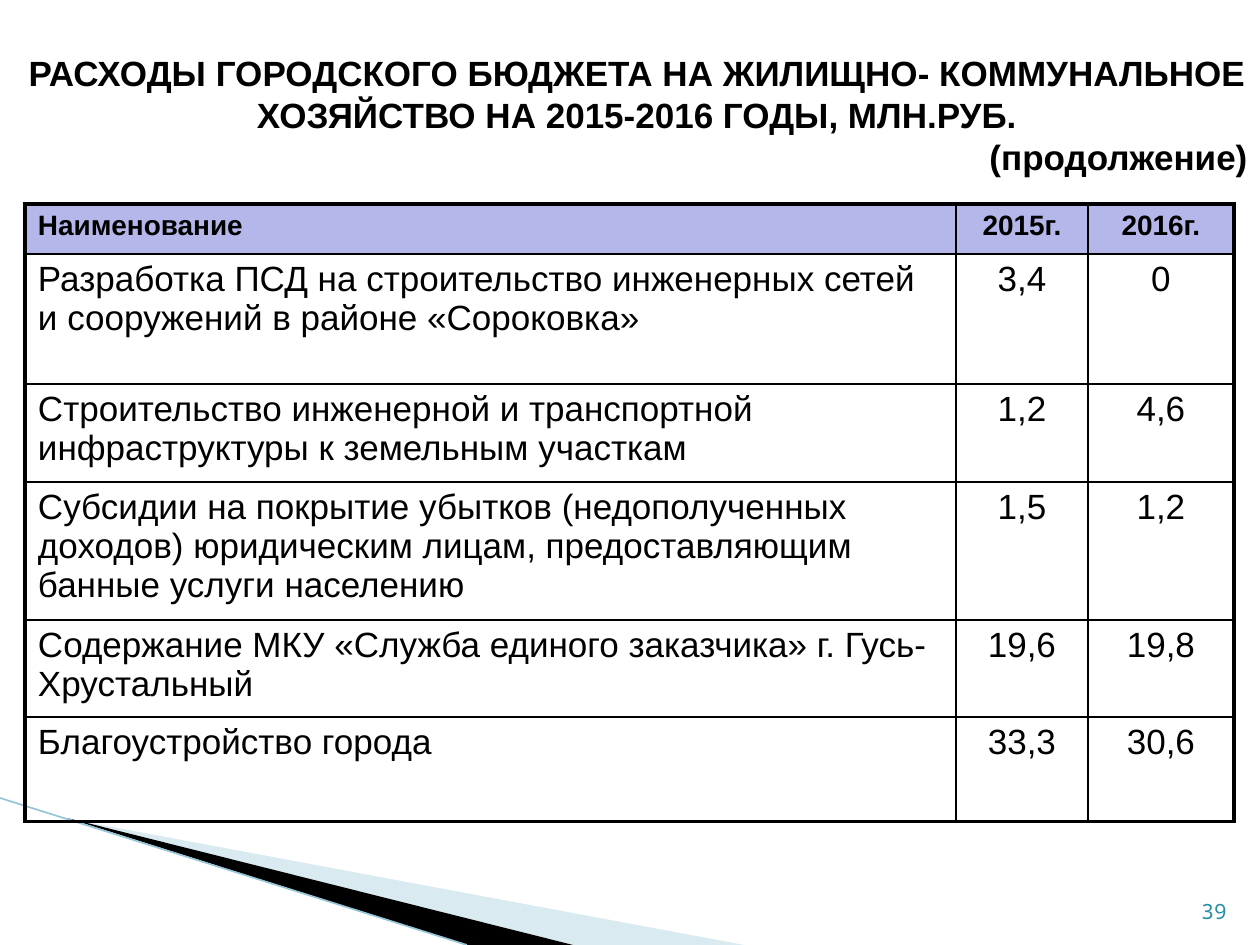
from dataclasses import dataclass

from lxml.etree import SubElement
from pptx import Presentation
from pptx.dml.color import RGBColor
from pptx.enum.shapes import MSO_CONNECTOR as Connector
from pptx.enum.text import MSO_ANCHOR as Anchor, PP_ALIGN as Align
from pptx.oxml.ns import qn
from pptx.util import Emu, Pt

EMU_PER_PX = 914400 / 126


@dataclass(frozen=True)
class Theme:
    ink: str = "000000"
    header: str = "B5B6E9"
    wedge: str = "A0CBDC"
    stripe: str = "97C5D8"
    number: str = "288FA9"
    font: str = "Arial"
    number_font: str = "Noto Sans Mono"
    body_size: int = 20
    header_size: int = 16
    number_size: int = 12
    thin: float = 1
    thick: float = 2.25
    stripe_width: float = 0.95


THEME = Theme()

TITLE = [
    ("РАСХОДЫ ГОРОДСКОГО БЮДЖЕТА НА ЖИЛИЩНО- КОММУНАЛЬНОЕ", Align.CENTER),
    ("ХОЗЯЙСТВО НА 2015-2016 ГОДЫ, МЛН.РУБ.", Align.CENTER),
    ("(продолжение)", Align.RIGHT),
]
EXPENSES = [
    ("Наименование", "2015г.", "2016г."),
    ("Разработка ПСД на строительство инженерных сетей и сооружений в районе «Сороковка»", "3,4", "0"),
    ("Строительство инженерной и транспортной инфраструктуры к земельным участкам", "1,2", "4,6"),
    ("Субсидии на покрытие убытков (недополученных доходов) юридическим лицам, "
     "предоставляющим банные услуги населению", "1,5", "1,2"),
    ("Содержание МКУ «Служба единого заказчика» г. Гусь-Хрустальный", "19,6", "19,8"),
    ("Благоустройство города", "33,3", "30,6"),
]
COLUMN_WIDTHS = [931, 132, 146]
ROW_HEIGHTS = [50, 130, 98, 138, 97, 105]


def px(length):
    return Emu(round(length * EMU_PER_PX))


def color(value):
    return RGBColor.from_string(value)


def write_text(paragraph, text, size=THEME.body_size, font=THEME.font, ink=THEME.ink,
               bold=False, align=Align.LEFT):
    paragraph.alignment = align
    run = paragraph.add_run()
    run.text = text
    run.font.size = Pt(size)
    run.font.name = font
    run.font.bold = bold
    run.font.color.rgb = color(ink)


def add_text_box(slide, box, lines, anchor=Anchor.TOP, **text_format):
    frame = slide.shapes.add_textbox(*map(px, box)).text_frame
    frame.word_wrap = True
    frame.vertical_anchor = anchor
    for index, (text, align) in enumerate(lines):
        paragraph = frame.add_paragraph() if index else frame.paragraphs[0]
        write_text(paragraph, text, align=align, **text_format)


def add_wedge(slide, points, fill, opacity=100):
    builder = slide.shapes.build_freeform(*points[0], scale=EMU_PER_PX)
    builder.add_line_segments(points[1:], close=True)
    shape = builder.convert_to_shape()
    shape.shadow.inherit = False
    shape.fill.solid()
    shape.fill.fore_color.rgb = color(fill)
    shape.line.fill.background()
    if opacity < 100:
        fill_color = shape.fill._xPr.find(qn("a:solidFill"))[0]
        SubElement(fill_color, qn("a:alpha"), val=str(opacity * 1000))


def add_stripe(slide, start, end):
    line = slide.shapes.add_connector(Connector.STRAIGHT, *map(px, start + end))
    line.line.color.rgb = color(THEME.stripe)
    line.line.width = Pt(THEME.stripe_width)
    SubElement(line._element.spPr, qn("a:effectLst"))


def set_borders(cell, outer_sides):
    properties = cell._tc.get_or_add_tcPr()
    for side in "LRTB":
        width = THEME.thick if side in outer_sides else THEME.thin
        border = SubElement(properties, qn(f"a:ln{side}"), w=str(Pt(width)))
        fill = SubElement(border, qn("a:solidFill"))
        SubElement(fill, qn("a:srgbClr"), val=THEME.ink)


def format_cell(cell, text, is_header, is_name, outer_sides):
    cell.margin_left = cell.margin_right = px(13)
    cell.margin_top = cell.margin_bottom = px(6)
    set_borders(cell, outer_sides)
    if is_header:
        cell.fill.solid()
        cell.fill.fore_color.rgb = color(THEME.header)
    else:
        cell.fill.background()
    write_text(cell.text_frame.paragraphs[0], text, bold=is_header,
               size=THEME.header_size if is_header else THEME.body_size,
               align=Align.LEFT if is_name else Align.CENTER)


def add_expense_table(slide, left, top):
    last_row, last_column = len(ROW_HEIGHTS) - 1, len(COLUMN_WIDTHS) - 1
    box = (left, top, sum(COLUMN_WIDTHS), sum(ROW_HEIGHTS))
    table = slide.shapes.add_table(last_row + 1, last_column + 1, *map(px, box)).table
    table.first_row = table.horz_banding = False
    for column, width in zip(table.columns, COLUMN_WIDTHS):
        column.width = px(width)
    for row, height in zip(table.rows, ROW_HEIGHTS):
        row.height = px(height)
    for r, values in enumerate(EXPENSES):
        for c, text in enumerate(values):
            edges = {"L": c == 0, "R": c == last_column, "T": r == 0, "B": r == last_row}
            outer_sides = [side for side, is_outer in edges.items() if is_outer]
            format_cell(table.cell(r, c), text, r == 0, c == 0, outer_sides)


def main():
    presentation = Presentation()
    presentation.slide_width, presentation.slide_height = px(1260), px(945)
    slide = presentation.slides.add_slide(presentation.slide_layouts[6])
    add_wedge(slide, [(69, 819), (744, 945), (573, 945)], THEME.wedge, opacity=40)
    add_wedge(slide, [(67, 818), (573, 945), (467, 945)], THEME.ink)
    add_stripe(slide, (0, 798), (467, 945))
    add_expense_table(slide, 25, 204)
    add_text_box(slide, (1134, 892, 105, 34), [("39", Align.RIGHT)],
                 size=THEME.number_size, font=THEME.number_font, ink=THEME.number)
    add_text_box(slide, (14, 24, 1246, 180), TITLE, anchor=Anchor.MIDDLE, bold=True)
    presentation.save("out.pptx")


if __name__ == "__main__":
    main()
